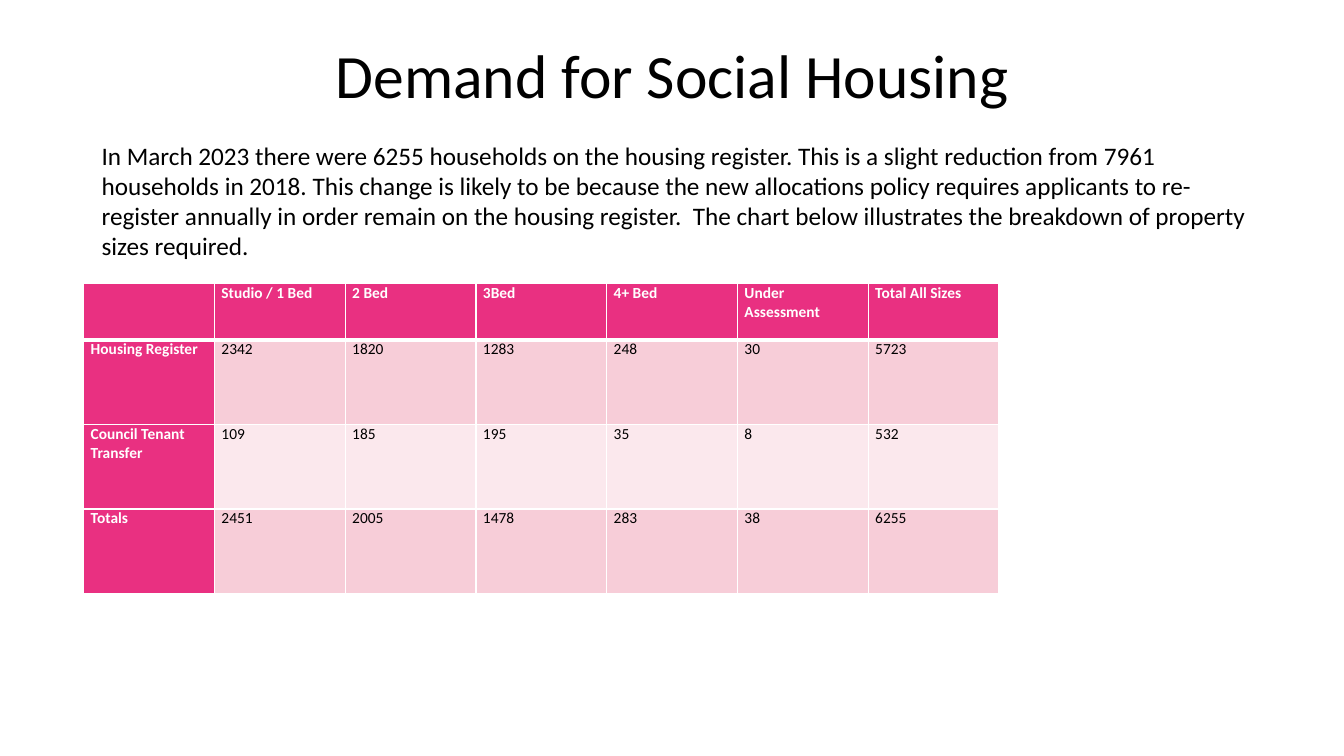
import pptx
import pptx.dml.color
import pptx.enum.text
import pptx.oxml
import pptx.oxml.ns
import pptx.util

Inches = pptx.util.Inches
Pt = pptx.util.Pt

INTRO = (
    "In March 2023 there were 6255 households on the housing register. "
    "This is a slight reduction from 7961 households in 2018. "
    "This change is likely to be because the new allocations policy requires "
    "applicants to re-register annually in order remain on the housing register.  "
    "The chart below illustrates the breakdown of property sizes required."
)
DEMAND = [
    ["", "Studio / 1 Bed", "2 Bed", "3Bed", "4+ Bed", "Under Assessment", "Total All Sizes"],
    ["Housing Register", "2342", "1820", "1283", "248", "30", "5723"],
    ["Council Tenant Transfer", "109", "185", "195", "35", "8", "532"],
    ["Totals", "2451", "2005", "1478", "283", "38", "6255"],
]


def rgb(value):
    return pptx.dml.color.RGBColor.from_string(value)


class Deck:
    """Holds the style and the current slide, and adds elements to it."""

    font = "Calibri"
    ink, white = "000000", "FFFFFF"
    accent, bands = "E93081", ("F7CDD8", "FBE8ED")

    def __init__(self, prs):
        self.slide = prs.slides.add_slide(prs.slide_layouts[5])

    def style(self, p, size, color, bold=False):
        p.font.name = self.font
        p.font.size = Pt(size)
        p.font.bold = bold
        p.font.color.rgb = rgb(color)

    def title(self, text, left, top, width, height):
        sp = self.slide.shapes.title
        sp.left, sp.top = Inches(left), Inches(top)
        sp.width, sp.height = Inches(width), Inches(height)
        tf = sp.text_frame
        tf.text = text
        tf.vertical_anchor = pptx.enum.text.MSO_ANCHOR.MIDDLE
        p = tf.paragraphs[0]
        p.alignment = pptx.enum.text.PP_ALIGN.CENTER
        p.line_spacing = 0.9
        self.style(p, 44, self.ink)

    def text(self, text, left, top, width, height):
        sp = self.slide.shapes.add_textbox(
            Inches(left), Inches(top), Inches(width), Inches(height))
        tf = sp.text_frame
        tf.word_wrap = True
        tf.text = text
        self.style(tf.paragraphs[0], 18, self.ink)

    def borders(self, cell, top, bottom):
        tcPr = cell._tc.get_or_add_tcPr()
        for side, width in (("L", 1), ("R", 1), ("T", top), ("B", bottom)):
            tcPr.append(pptx.oxml.parse_xml(
                f'<a:ln{side} {pptx.oxml.ns.nsdecls("a")} w="{Pt(width)}"><a:solidFill>'
                f'<a:srgbClr val="{self.white}"/></a:solidFill></a:ln{side}>'))

    def cell(self, cell, text, row, col):
        heading = row == 0 or col == 0
        cell.text = text
        cell.margin_left = cell.margin_right = Inches(0.07)
        cell.margin_top = cell.margin_bottom = 0
        self.borders(cell, 3 if row == 1 else 1, 3 if row == 0 else 1)
        cell.fill.solid()
        cell.fill.fore_color.rgb = rgb(self.accent if heading else self.bands[(row - 1) % 2])
        self.style(cell.text_frame.paragraphs[0], 11, self.white if heading else self.ink, heading)

    def table(self, rows, left, top, width, heights):
        cols = len(rows[0])
        table = self.slide.shapes.add_table(
            len(rows), cols, Inches(left), Inches(top),
            Inches(width), Inches(sum(heights))).table
        table.first_col = True
        table.horz_banding = False
        for column in table.columns:
            column.width = Inches(width / cols)
        for i, (values, height) in enumerate(zip(rows, heights)):
            table.rows[i].height = Inches(height)
            for j, value in enumerate(values):
                self.cell(table.cell(i, j), value, i, j)


def main():
    prs = pptx.Presentation()
    prs.slide_width, prs.slide_height = Inches(13.33), Inches(7.5)
    deck = Deck(prs)
    deck.title("Demand for Social Housing", 0.92, 0.4, 11.5, 0.75)
    deck.table(DEMAND, 0.83, 2.81, 9.08, [0.56] + [0.84] * 3)
    deck.text(INTRO, 0.91, 1.34, 11.74, 1.58)
    prs.save("out.pptx")


if __name__ == "__main__":
    main()
